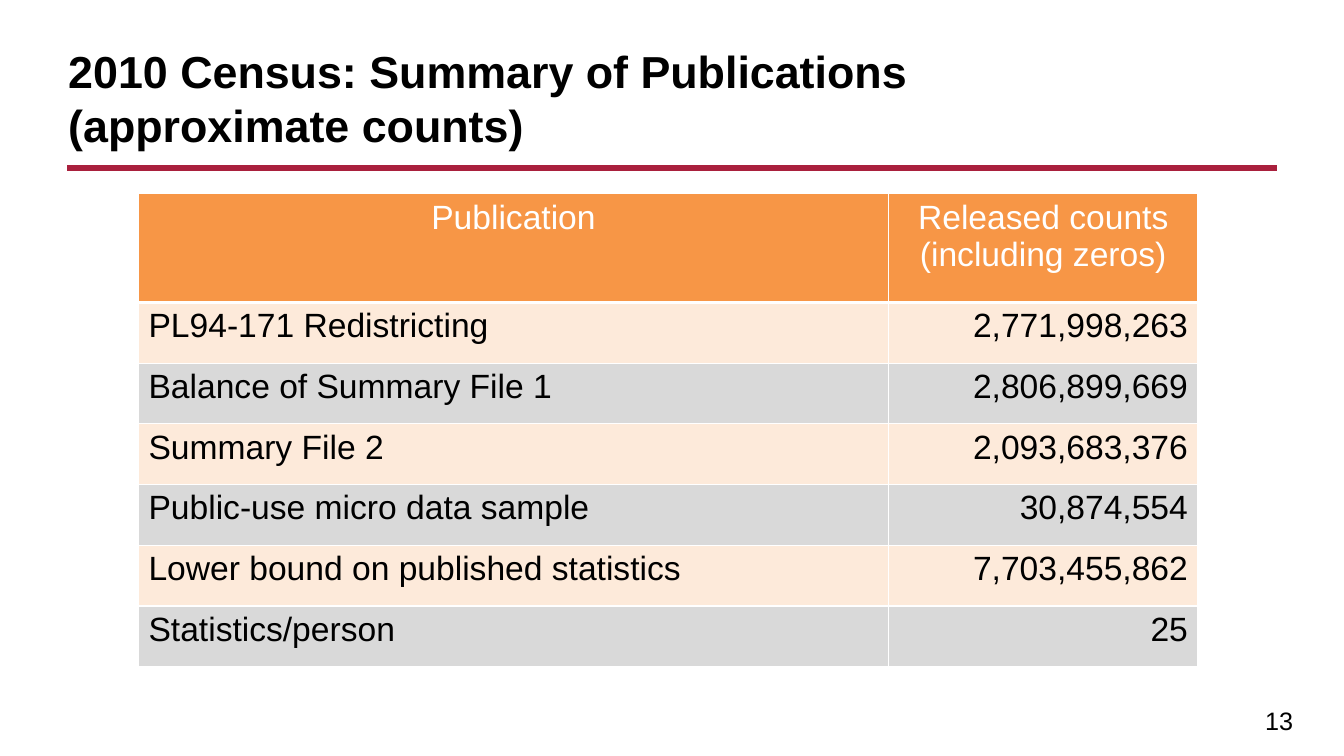
import pptx
import pptx.dml.color
import pptx.enum.shapes
import pptx.enum.text
import pptx.oxml
import pptx.oxml.ns
import pptx.util

Cm = pptx.util.Cm
Pt = pptx.util.Pt
ALIGN = pptx.enum.text.PP_ALIGN
ANCHOR = pptx.enum.text.MSO_ANCHOR

FONT = "Arial"
BLACK, WHITE, RED = "000000", "FFFFFF", "A9203D"
ORANGE, PEACH, GREY = "F79646", "FDEADA", "D9D9D9"

HEADS = ("Publication", "Released counts (including zeros)")
COUNTS = (
    ("PL94-171 Redistricting", "2,771,998,263"),
    ("Balance of Summary File 1", "2,806,899,669"),
    ("Summary File 2", "2,093,683,376"),
    ("Public-use micro data sample", "30,874,554"),
    ("Lower bound on published statistics", "7,703,455,862"),
    ("Statistics/person", "25"),
)
WIDTHS = (18.9, 7.8)
HEAD_HIGH, ROW_HIGH = 2.74, 1.53


def color(code):
    return pptx.dml.color.RGBColor.from_string(code)


def write(frame, text, size=24, ink=BLACK, bold=False, align=ALIGN.LEFT):
    """Fill a text frame with one styled paragraph."""
    para = frame.paragraphs[0]
    para.text = text
    para.alignment = align
    for run in para.runs:
        run.font.name = FONT
        run.font.size = Pt(size)
        run.font.bold = bold
        run.font.color.rgb = color(ink)


def add_text(slide, left, top, wide, high, text, anchor=ANCHOR.TOP, **style):
    box = slide.shapes.add_textbox(Cm(left), Cm(top), Cm(wide), Cm(high))
    frame = box.text_frame
    frame.word_wrap = True
    frame.vertical_anchor = anchor
    write(frame, text, **style)


def add_rule(slide, left, right, top, ink, weight):
    rule = slide.shapes.add_connector(
        pptx.enum.shapes.MSO_CONNECTOR.STRAIGHT,
        Cm(left), Cm(top), Cm(right), Cm(top))
    rule.line.color.rgb = color(ink)
    rule.line.width = Pt(weight)
    props = rule._element.spPr
    props.append(pptx.oxml.parse_xml(
        f'<a:effectLst {pptx.oxml.ns.nsdecls("a")}/>'))


def edge(cell, ink, base=1):
    """Draw 1 pt borders, with a base border of its own weight."""
    props = cell._tc.get_or_add_tcPr()
    sides = (("lnL", 1), ("lnR", 1), ("lnT", 1), ("lnB", base))
    for place, (side, weight) in enumerate(sides):
        props.insert(place, pptx.oxml.parse_xml(
            f'<a:{side} {pptx.oxml.ns.nsdecls("a")} w="{Pt(weight)}">'
            f'<a:solidFill><a:srgbClr val="{ink}"/></a:solidFill></a:{side}>'))


def style_cell(cell, text, fill, base=1, **style):
    cell.fill.solid()
    cell.fill.fore_color.rgb = color(fill)
    edge(cell, WHITE, base)
    write(cell.text_frame, text, **style)


def add_counts(slide, left, top):
    high = HEAD_HIGH + ROW_HIGH * len(COUNTS)
    table = slide.shapes.add_table(
        len(COUNTS) + 1, len(HEADS),
        Cm(left), Cm(top), Cm(sum(WIDTHS)), Cm(high)).table
    for col, wide in zip(table.columns, WIDTHS):
        col.width = Cm(wide)
    for num, row in enumerate(table.rows):
        row.height = Cm(ROW_HIGH if num else HEAD_HIGH)

    # Header row
    for col, text in enumerate(HEADS):
        style_cell(table.cell(0, col), text, ORANGE, base=3,
                   ink=WHITE, align=ALIGN.CENTER)

    # Body rows in alternating bands
    for num, texts in enumerate(COUNTS, 1):
        fill = PEACH if num % 2 else GREY
        for col, text in enumerate(texts):
            style_cell(table.cell(num, col), text, fill,
                       align=ALIGN.RIGHT if col else ALIGN.LEFT)


def main():
    deck = pptx.Presentation()
    deck.slide_width, deck.slide_height = Cm(33.87), Cm(19.05)
    slide = deck.slides.add_slide(deck.slide_layouts[6])

    # Title and rule
    add_rule(slide, 1.7, 32.18, 4.24, RED, 4.5)
    add_text(slide, 1.47, 0.76, 30.68, 3.18,
             "2010 Census: Summary of Publications\v(approximate counts)",
             anchor=ANCHOR.BOTTOM, size=32, bold=True)

    # Table
    add_counts(slide, 3.49, 4.88)

    # Page number
    add_text(slide, 25.65, 17.65, 7.19, 1, "13", size=18, align=ALIGN.RIGHT)

    deck.save("out.pptx")


if __name__ == "__main__":
    main()
